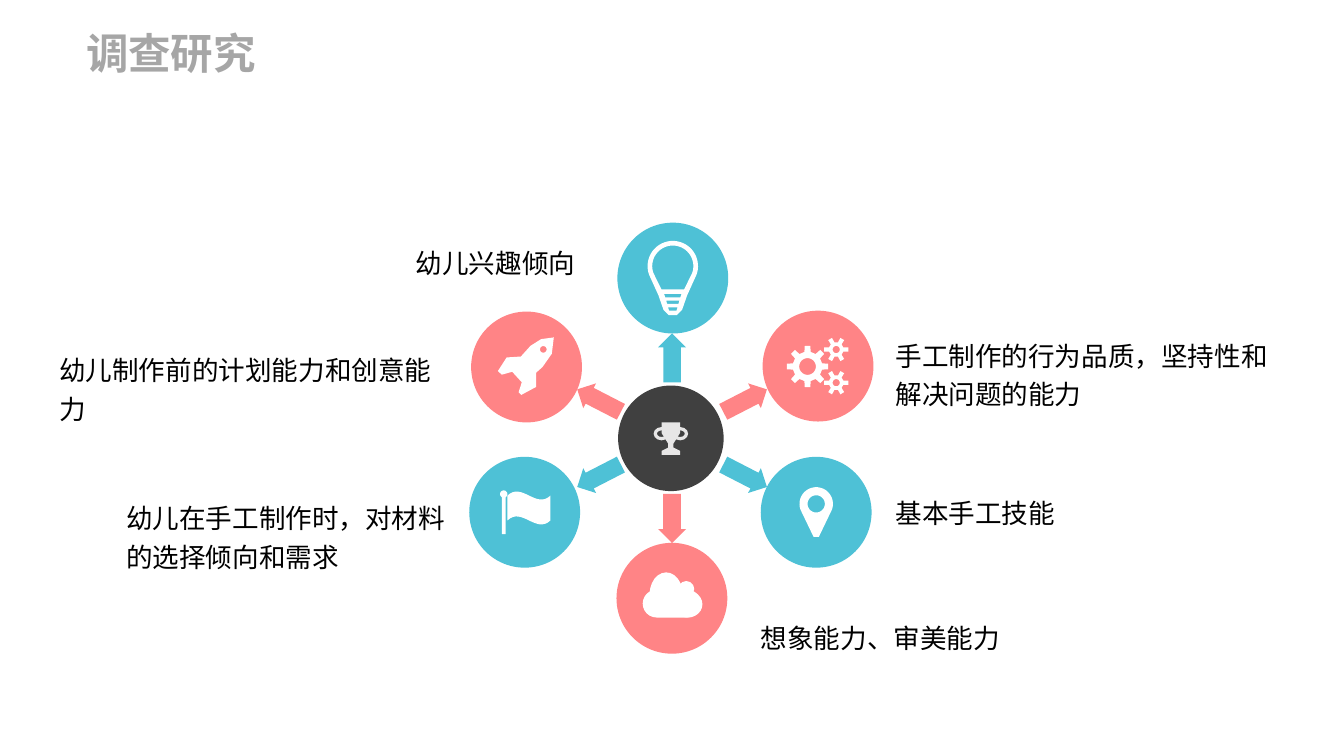
"""Build the survey slide: a hub, six arrows, six icon nodes and their labels."""
import math

from lxml import etree
from pptx import Presentation, util as u
from pptx.dml.color import RGBColor
from pptx.enum import shapes, text
from pptx.oxml.ns import qn

PRESET = shapes.MSO_SHAPE
TITLE = "调查研究"
FONTS = {"title": "Arial", "label": "Noto Sans CJK SC"}
COLORS = {"teal": "4EC1D6", "coral": "FF8486", "hub": "404040", "trophy": "E7E6E6",
          "icon": "FFFFFF", "title": "A6A6A6", "label": "000000"}
HUB = (505.4, 330.2)
HUB_SIZE, NODE_SIZE = 79.5, 83.5
ARROW_WIDTH, ARROW_LENGTH = 21, 37
ARROW_CENTER = (506.3, 330.1)
SIDE_REACH, UPRIGHT_REACH = (55, 28.3), 60.5

NODES = [
    ("bulb", "teal", (506.9, 209.5), (0, -1)),
    ("pin", "teal", (614.9, 385.9), (1, 1)),
    ("rocket", "coral", (396.7, 276.5), (-1, -1)),
    ("cloud", "coral", (506.2, 450.7), (0, 1)),
    ("flag", "teal", (395.3, 385.9), (-1, 1)),
    ("gears", "coral", (616.3, 275.8), (1, -1)),
]
LABELS = [
    ("幼儿兴趣倾向", 313.2, 181.4, 137, 29),
    ("幼儿制作前的计划能力和创意能力", 44.6, 262.1, 300, 29),
    ("幼儿在手工制作时，对材料的选择倾向和需求", 95, 373.7, 250, 58),
    ("想象能力、审美能力", 573.1, 463.7, 207, 29),
    ("基本手工技能", 674.6, 369.4, 207, 29),
    ("手工制作的行为品质，坚持性和解决问题的能力", 674.6, 251.3, 284, 58),
]
ICON_SHAPES = {
    "cloud": [(PRESET.ROUNDED_RECTANGLE, 0, 4, 44, 21), (PRESET.OVAL, -4.3, -3, 25, 33),
              (PRESET.OVAL, 10.8, -7, 12, 12), (PRESET.OVAL, 12, 4.5, 22, 20)],
    "flag": [(PRESET.OVAL, -15.8, -13.7, 5.6, 5.6),
             (PRESET.RECTANGLE, -15.8, 2, 2.9, 29), (PRESET.WAVE, 3.2, -3.2, 32.4, 25)],
    "trophy": [(PRESET.DONUT, -7, -3.5, 12, 10), (PRESET.DONUT, 7, -3.5, 12, 10)],
}


def arc(x, y, radius, start=0, sweep=360, pieces=36):
    """Return points along a circular arc, in degrees clockwise from the right."""
    angles = [math.radians(start + sweep * n / pieces) for n in range(pieces + 1)]
    return [(x + radius * math.cos(a), y + radius * math.sin(a)) for a in angles]


def gear(x, y, tip, root, teeth):
    """Return the outline of a gear with one tooth pointing right."""
    step = 2 * math.pi / teeth
    profile = [(-0.27, root), (-0.17, tip), (0.17, tip), (0.27, root)]
    return [(x + radius * math.cos((tooth + turn) * step),
             y + radius * math.sin((tooth + turn) * step))
            for tooth in range(teeth) for turn, radius in profile]


def mirror(half):
    """Complete a right-hand profile, listed downwards, with its left side."""
    return half + [(-x, y) for x, y in reversed(half)]


def drop(y, radius, half):
    """Return a round head above a symmetric foot."""
    return arc(0, y, radius, 160, 220) + mirror(half)


ICON_OUTLINES = {
    "bulb": [drop(-9, 19, [(10.8, 13), (7, 24), (3, 28)]), drop(-9, 15.5, [(8.5, 8.6)]),
             *(mirror([(width, y), (width - 0.8, y + 2.5)])
               for width, y in ((6.5, 12), (5, 17), (3.6, 22)))],
    "pin": [drop(-6.3, 12.6, [(2, 18.5)]), arc(0, -6.3, 6.5)],
    "rocket": [[(12, 0), (7.2, 4.3), (7.2, 15), (-4, 21), (-6, 19), (-3.6, 11.5),
                (-10.8, 3.6), (-18.7, 5.8), (-21.6, 3), (-15, -7.2), (-4.3, -7.9),
                (3, -16), (11, -21), (20.5, -22.3), (19, -10)],
               arc(12.6, -13.3, 2.5)],
    "gears": [gear(-7.9, 0.3, 15.7, 11.2, 8), arc(-7.9, 0.3, 6.3)]
    + [outline for y in (-12.5, 12.5)
       for outline in (gear(13.7, y, 9.3, 5.6, 6), arc(13.7, y, 2.7))],
    "trophy": [mirror([(7, -12), (7, -4), (2, 4), (2, 7), (7, 9.5), (7, 12.5)])],
}


def paint(shape, color):
    """Give a shape a flat fill without line or shadow."""
    shape.fill.solid()
    shape.fill.fore_color.rgb = RGBColor.from_string(COLORS[color])
    shape.line.fill.background()
    shape.shadow.inherit = False


def add_centered(slide, kind, center, width, height, color):
    """Add a preset shape around a centre point."""
    x, y = center
    shape = slide.shapes.add_shape(kind, u.Pt(x - width / 2), u.Pt(y - height / 2),
                                   u.Pt(width), u.Pt(height))
    paint(shape, color)
    return shape


def add_icon(slide, name, center, color):
    """Draw an icon from its outlines and preset shapes."""
    left, top = center
    builder = None
    for outline in ICON_OUTLINES.get(name, []):
        first, *rest = [(u.Pt(left + x), u.Pt(top + y)) for x, y in outline]
        if builder is None:
            builder = slide.shapes.build_freeform(*first)
        else:
            builder.move_to(*first)
        builder.add_line_segments(rest)
    if builder is not None:
        paint(builder.convert_to_shape(), color)
    for kind, x, y, width, height in ICON_SHAPES.get(name, []):
        part = add_centered(slide, kind, (left + x, top + y), width, height, color)
        if kind == PRESET.ROUNDED_RECTANGLE:
            part.adjustments[0] = 0.5


def write(shape, words, box, role, size, bold=False):
    """Place a text shape and format its single paragraph."""
    shape.left, shape.top, shape.width, shape.height = (u.Pt(value) for value in box)
    frame = shape.text_frame
    frame.text = words
    frame.word_wrap = True
    frame.auto_size = text.MSO_AUTO_SIZE.NONE
    frame.margin_left = frame.margin_right = frame.margin_top = frame.margin_bottom = 0
    paragraph = frame.paragraphs[0]
    paragraph.alignment = text.PP_ALIGN.LEFT
    font = paragraph.runs[0].font
    font.name, font.size, font.bold = FONTS[role], u.Pt(size), bold
    font.color.rgb = RGBColor.from_string(COLORS[role])
    east_asian = etree.Element(qn("a:ea"), typeface=FONTS["label"])
    font._element.find(qn("a:latin")).addnext(east_asian)
    return frame


def main():
    """Assemble and save the slide."""
    presentation = Presentation()
    presentation.slide_width, presentation.slide_height = u.Pt(1012.5), u.Pt(569.5)
    slide = presentation.slides.add_slide(presentation.slide_layouts[5])
    title = write(slide.shapes.title, TITLE, (64.8, 20.2, 221, 39), "title", 32, True)
    title.vertical_anchor = text.MSO_ANCHOR.MIDDLE

    add_centered(slide, PRESET.OVAL, HUB, HUB_SIZE, HUB_SIZE, "hub")
    add_icon(slide, "trophy", HUB, "trophy")
    for icon, color, center, (across, down) in NODES:
        dx = across * SIDE_REACH[0]
        dy = down * (SIDE_REACH[1] if across else UPRIGHT_REACH)
        arrow = add_centered(slide, PRESET.DOWN_ARROW,
                             (ARROW_CENTER[0] + dx, ARROW_CENTER[1] + dy),
                             ARROW_WIDTH, ARROW_LENGTH, color)
        arrow.adjustments[0], arrow.adjustments[1] = 0.635, 0.5
        arrow.rotation = math.degrees(math.atan2(-dx, dy)) % 360
        add_centered(slide, PRESET.OVAL, center, NODE_SIZE, NODE_SIZE, color)
        add_icon(slide, icon, center, "icon")
    for words, *box in LABELS:
        label = write(slide.shapes.add_textbox(0, 0, 0, 0), words, box, "label", 20)
        label.paragraphs[0].line_spacing = 1.2
    presentation.save("out.pptx")


if __name__ == "__main__":
    main()
